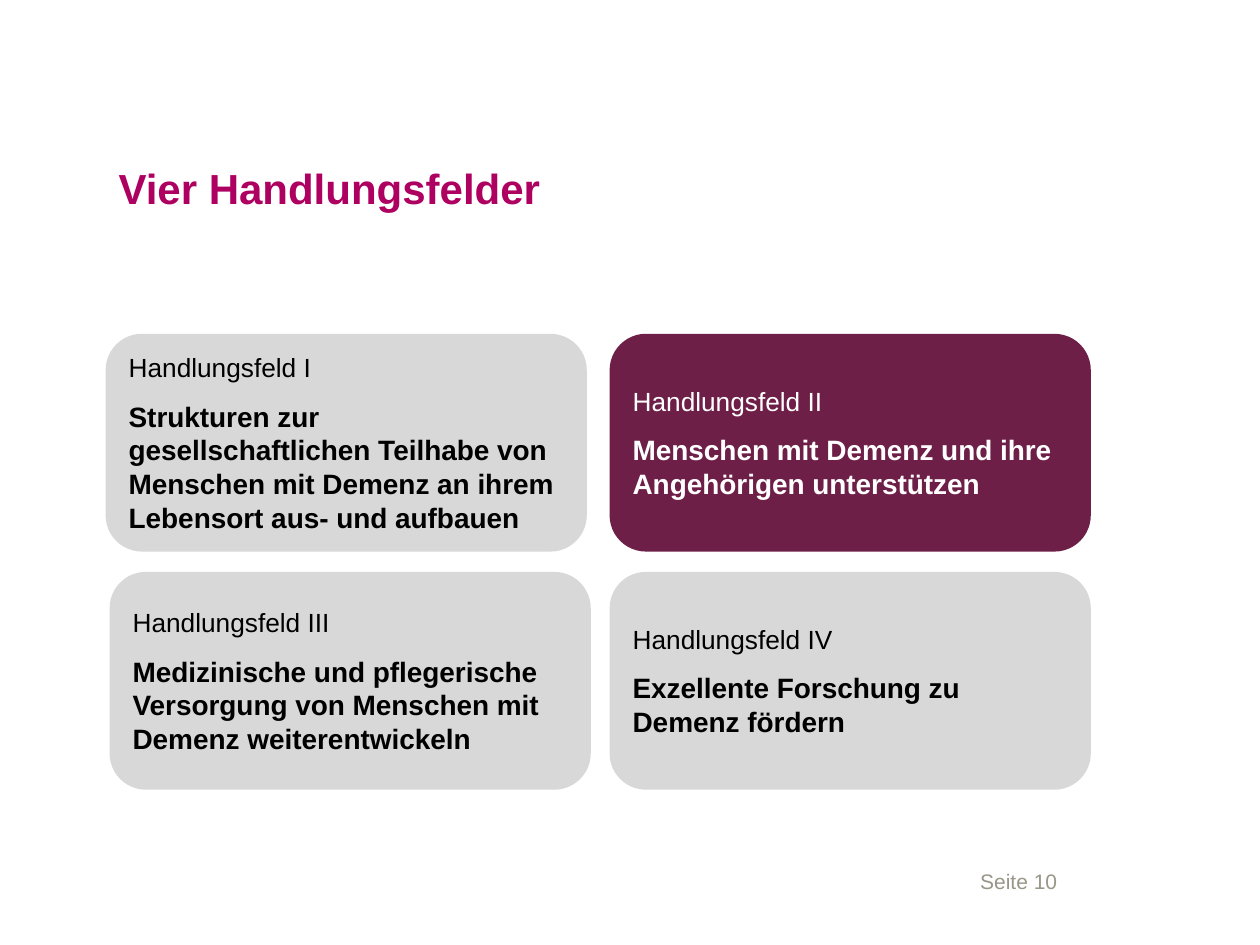
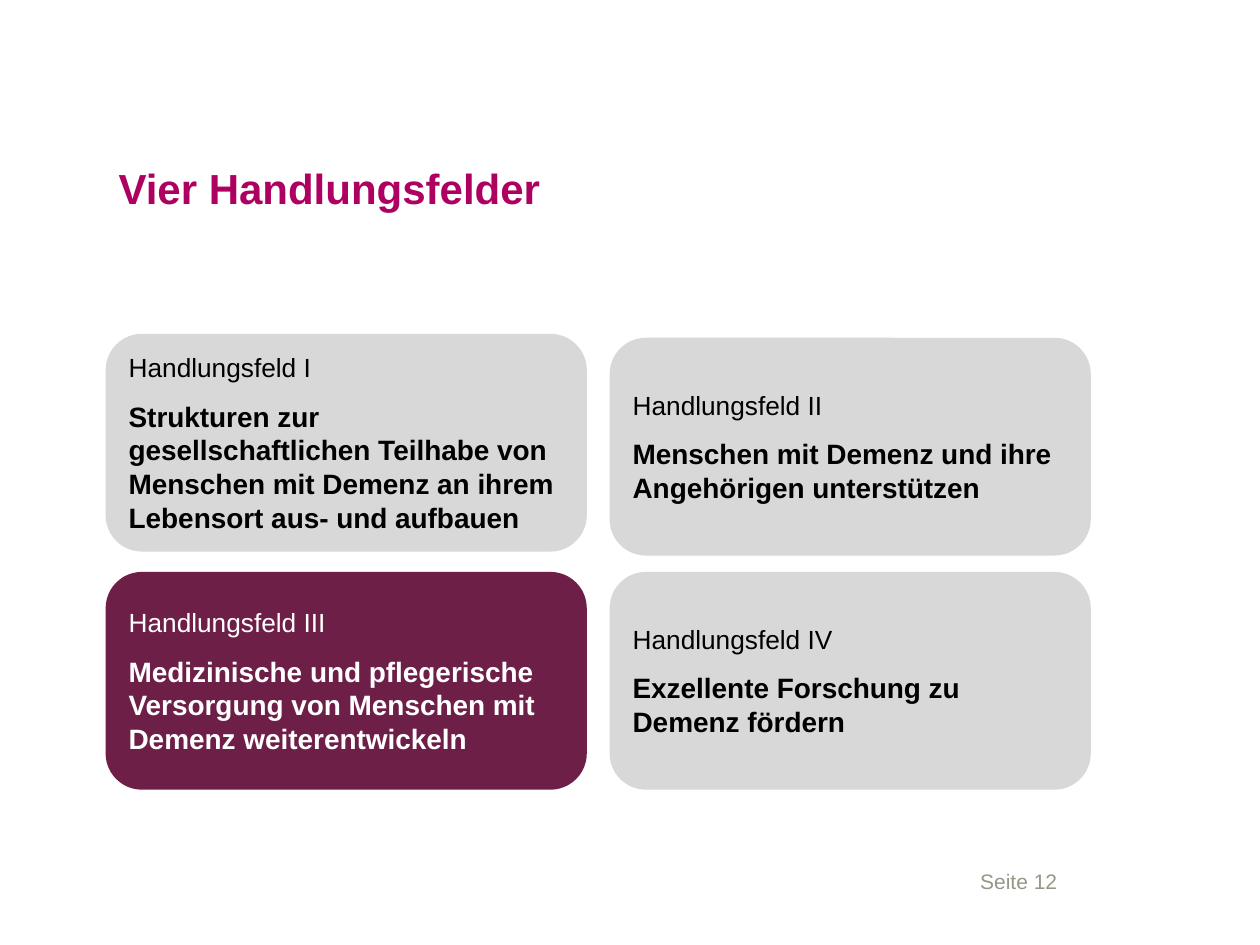
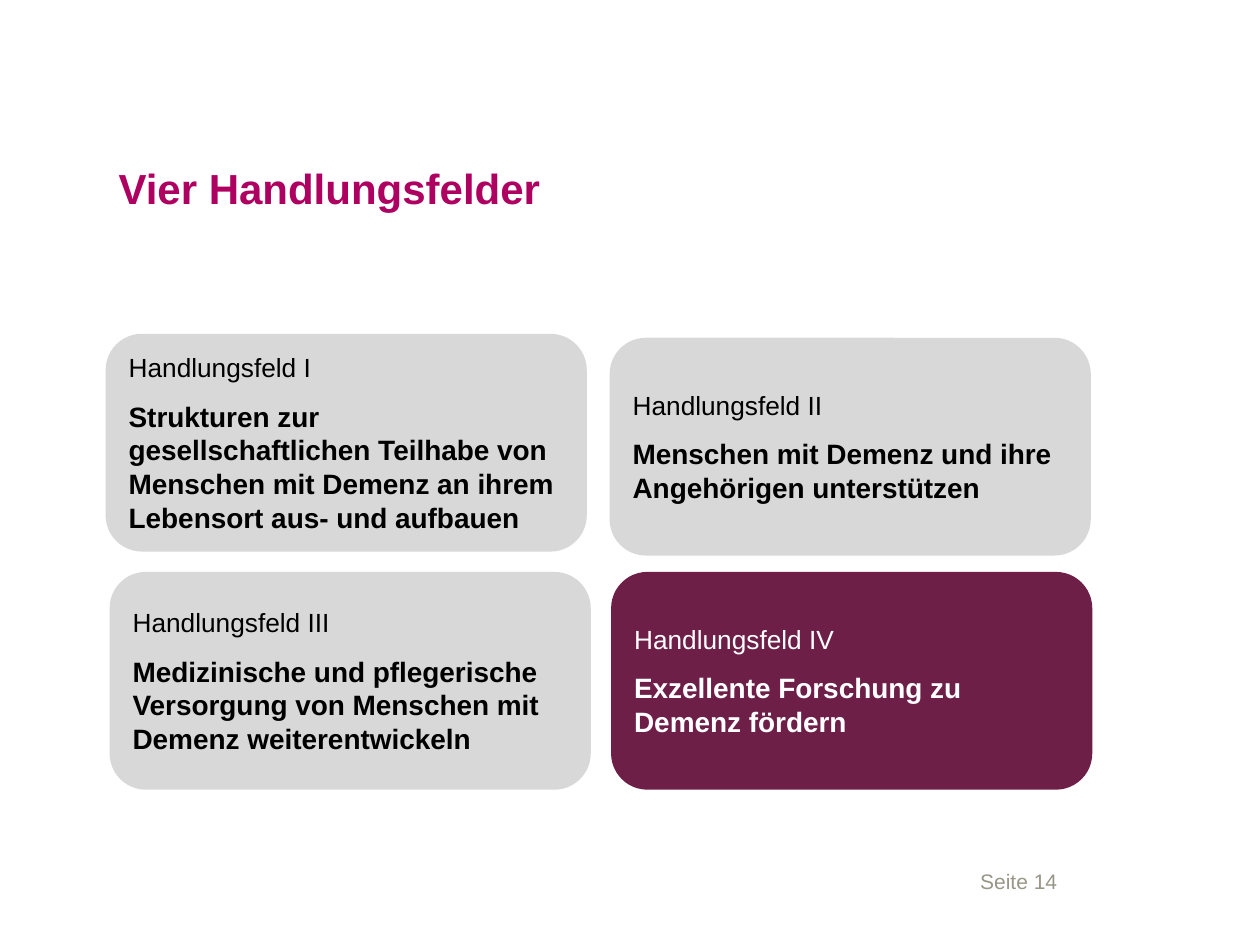
from pptx import Presentation
from pptx.dml.color import RGBColor
from pptx.enum.shapes import MSO_SHAPE
from pptx.enum.text import MSO_ANCHOR, MSO_AUTO_SIZE, PP_ALIGN
from pptx.util import Cm, Pt

COLORS = {
    "title": "AE0060",
    "footer": "989687",
    "card": "D8D8D8",
    "card_text": "000000",
    "highlight": "6E1F47",
    "highlight_text": "FFFFFF",
}
FONT = "Arial"
TITLE = "Vier Handlungsfelder"
TITLE_ONLY_LAYOUT = 5

FIELDS = [
    ("I", "Strukturen zur gesellschaftlichen Teilhabe von Menschen mit Demenz "
          "an ihrem Lebensort aus- und aufbauen"),
    ("II", "Menschen mit Demenz und ihre Angehörigen unterstützen"),
    ("III", "Medizinische und pflegerische Versorgung von Menschen mit Demenz "
            "weiterentwickeln"),
    ("IV", "Exzellente Forschung zu Demenz fördern"),
]
# Page number and the field highlighted on that page
PAGES = [(10, "II"), (12, "III"), (14, "IV")]

# Card grid in cm
GRID_LEFT, GRID_TOP = 2.13, 6.73
COLUMN_STEP, ROW_STEP = 10.16, 4.8
CARD_WIDTH, CARD_HEIGHT = 9.7, 4.39
# Shift right and down in cm, by field and whether it is highlighted
NUDGES = {("II", False): (0, 0.08), ("III", False): (0.08, 0), ("IV", True): (0.03, 0)}


def add_run(paragraph, text, size, color, bold=False):
    run = paragraph.add_run()
    run.text = text
    run.font.name = FONT
    run.font.size = Pt(size)
    run.font.bold = bold
    run.font.color.rgb = RGBColor.from_string(COLORS[color])


def set_insets(frame, left, top, right, bottom):
    frame.margin_left, frame.margin_top = Cm(left), Cm(top)
    frame.margin_right, frame.margin_bottom = Cm(right), Cm(bottom)


def add_title(slide):
    title = slide.shapes.title
    title.left, title.top = Cm(2.39), Cm(2.95)
    title.width, title.height = Cm(21.89), Cm(2.44)
    frame = title.text_frame
    frame.word_wrap = True
    frame.auto_size = MSO_AUTO_SIZE.NONE
    frame.vertical_anchor = MSO_ANCHOR.TOP
    set_insets(frame, 0, 0, 0, 0)
    heading = frame.paragraphs[0]
    heading.alignment = PP_ALIGN.LEFT
    heading.line_spacing = 1.33
    add_run(heading, TITLE, 24, "title", bold=True)


def add_footer(slide, page):
    footer = slide.shapes.add_textbox(Cm(19.76), Cm(17.37), Cm(3.84), Cm(0.79))
    frame = footer.text_frame
    frame.word_wrap = True
    set_insets(frame, 0, 0.13, 0.25, 0.13)
    add_run(frame.paragraphs[0], f"Seite {page}", 12, "footer")


def add_card(slide, left, top, number, goal, highlighted):
    card = slide.shapes.add_shape(
        MSO_SHAPE.ROUNDED_RECTANGLE, Cm(left), Cm(top), Cm(CARD_WIDTH), Cm(CARD_HEIGHT))
    style = "highlight" if highlighted else "card"
    card.shadow.inherit = False
    card.fill.solid()
    card.fill.fore_color.rgb = RGBColor.from_string(COLORS[style])
    card.line.fill.background()

    frame = card.text_frame
    frame.word_wrap = True
    frame.vertical_anchor = MSO_ANCHOR.MIDDLE
    set_insets(frame, 0.25, 0.13, 0.25, 0.13)
    label = frame.paragraphs[0]
    label.alignment = PP_ALIGN.LEFT
    add_run(label, f"Handlungsfeld {number}", 15, f"{style}_text")
    description = frame.add_paragraph()
    description.alignment = PP_ALIGN.LEFT
    description.space_before = Pt(9.2)
    add_run(description, goal, 16, f"{style}_text", bold=True)


def add_cards(slide, highlighted_number):
    for index, (number, goal) in enumerate(FIELDS):
        row, column = divmod(index, 2)
        highlighted = number == highlighted_number
        right, down = NUDGES.get((number, highlighted), (0, 0))
        add_card(slide, GRID_LEFT + column * COLUMN_STEP + right,
                 GRID_TOP + row * ROW_STEP + down, number, goal, highlighted)


def main():
    presentation = Presentation()
    presentation.slide_width, presentation.slide_height = Cm(25.4), Cm(19.05)
    for page, highlighted_number in PAGES:
        slide = presentation.slides.add_slide(presentation.slide_layouts[TITLE_ONLY_LAYOUT])
        add_title(slide)
        add_footer(slide, page)
        add_cards(slide, highlighted_number)
    presentation.save("out.pptx")


if __name__ == "__main__":
    main()
